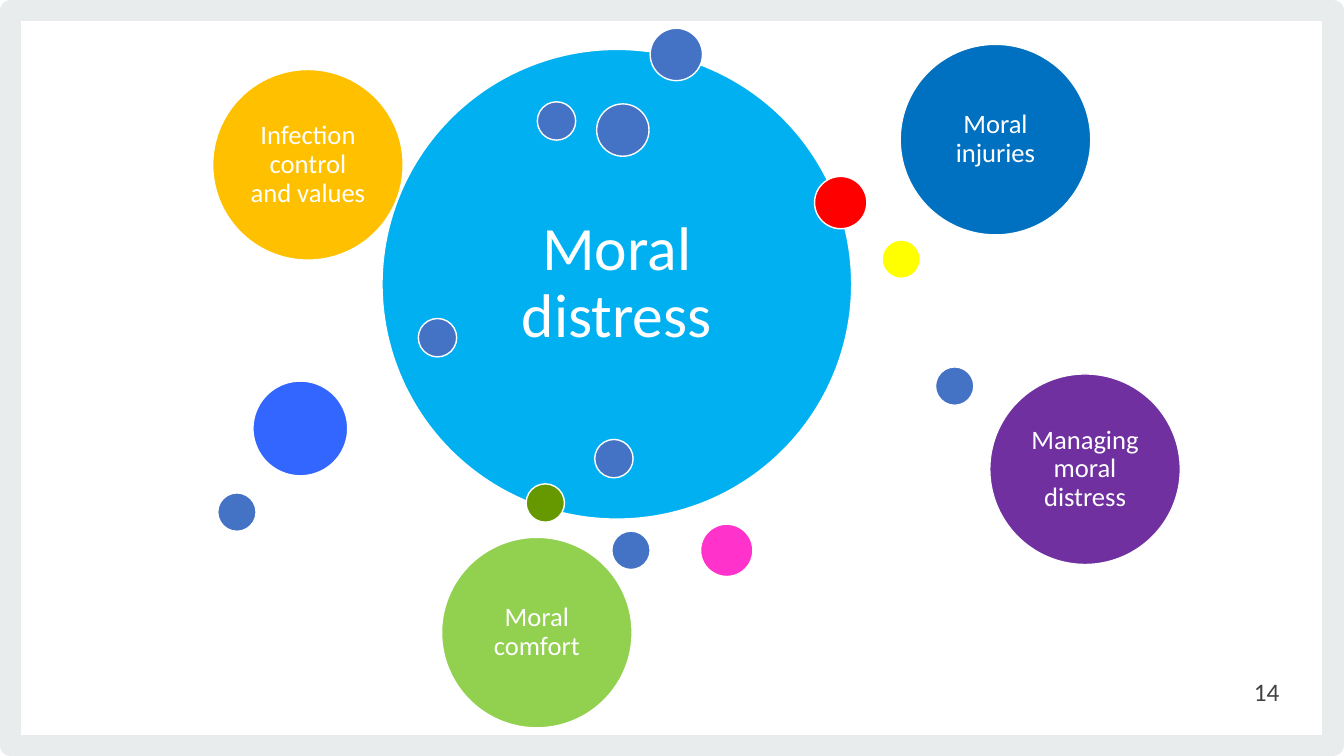
from lxml import etree
from pptx import Presentation
from pptx import util as u
from pptx.dml.color import RGBColor
from pptx.enum import shapes, text
from pptx.oxml.ns import qn

Pt = u.Pt
FONT = "Calibri"
COLORS = {
    "white": "FFFFFF", "frame": "E9ECED", "ink": "414042",
    "sky": "00B0F0", "steel": "4472C4", "olive": "669900",
    "yellow": "FFFF00", "pink": "FF33CC", "amber": "FFC000",
    "royal": "3366FF", "blue": "0070C0", "red": "FF0000",
    "purple": "7030A0", "green": "92D050",
}
# Circle diameters
HUB, TOPIC, LARGE, MEDIUM, SMALL = 335.5, 136.1, 67.7, 37.4, 27.4

# Left, top, diameter, colour, label; from back to front
CIRCLES = [
    (272.9, 35.3, HUB, "sky", "Moral distress"),
    (464.4, 20.2, MEDIUM, "steel", ""),
    (375.8, 345.6, SMALL, "olive", ""),
    (630, 171.4, SMALL, "yellow", ""),
    (500.4, 374.4, MEDIUM, "pink", ""),
    (383.8, 72.7, SMALL, "steel", ""),
    (298.8, 227.5, SMALL, "steel", ""),
    (151.9, 49.7, TOPIC, "amber", "Infection control and values"),
    (426.2, 74.2, MEDIUM, "steel", ""),
    (180.7, 272.2, LARGE, "royal", ""),
    (643, 31.7, TOPIC, "blue", "Moral injuries"),
    (581.8, 126, MEDIUM, "red", ""),
    (155.5, 352.1, SMALL, "steel", ""),
    (424.8, 313.9, SMALL, "steel", ""),
    (707, 267.1, TOPIC, "purple", "Managing moral distress"),
    (668.2, 262.1, SMALL, "steel", ""),
    (315.4, 383.8, TOPIC, "green", "Moral comfort"),
    (437, 379.4, SMALL, "steel", ""),
]


def color(name):
    return RGBColor.from_string(COLORS[name])


def set_text(sp, label, size, name, align, inset):
    tf = sp.text_frame
    tf.word_wrap = True
    tf.vertical_anchor = text.MSO_ANCHOR.MIDDLE
    tf.margin_left = tf.margin_right = Pt(inset)
    tf.margin_top = tf.margin_bottom = Pt(inset)
    tf.text = label
    p = tf.paragraphs[0]
    p.alignment = align
    font = p.runs[0].font
    font.name, font.size = FONT, Pt(size)
    font.color.rgb = color(name)
    return p


def add_frame(s):
    sp = s.shapes.add_shape(shapes.MSO_SHAPE.RECTANGLE,
                            Pt(7.4), Pt(7.4), Pt(944.8), Pt(525.3))
    sp.shadow.inherit = False
    sp.fill.background()
    sp.line.color.rgb = color("frame")
    sp.line.width = Pt(15.1)
    # Round the outer corners
    etree.SubElement(sp.line._get_or_add_ln(), qn("a:round"))


def add_circle(s, left, top, diameter, fill, label):
    sp = s.shapes.add_shape(shapes.MSO_SHAPE.OVAL, Pt(left), Pt(top),
                            Pt(diameter), Pt(diameter))
    sp.shadow.inherit = False
    sp.fill.solid()
    sp.fill.fore_color.rgb = color(fill)
    sp.line.color.rgb = color("white")
    sp.line.width = Pt(1)
    if label:
        size, inset = (44, 13) if diameter == HUB else (19, 6)
        p = set_text(sp, label, size, "white", text.PP_ALIGN.CENTER, inset)
        p.line_spacing = 0.9


def add_page_number(s, number):
    sp = s.shapes.add_textbox(Pt(705), Pt(479.5), Pt(216), Pt(28.8))
    set_text(sp, number, 18, "ink", text.PP_ALIGN.RIGHT, 7.2)


def main():
    prs = Presentation()
    prs.slide_width, prs.slide_height = Pt(960), Pt(540)
    s = prs.slides.add_slide(prs.slide_layouts[6])
    add_frame(s)
    add_page_number(s, "14")
    for circle in CIRCLES:
        add_circle(s, *circle)
    prs.save("out.pptx")


if __name__ == "__main__":
    main()
